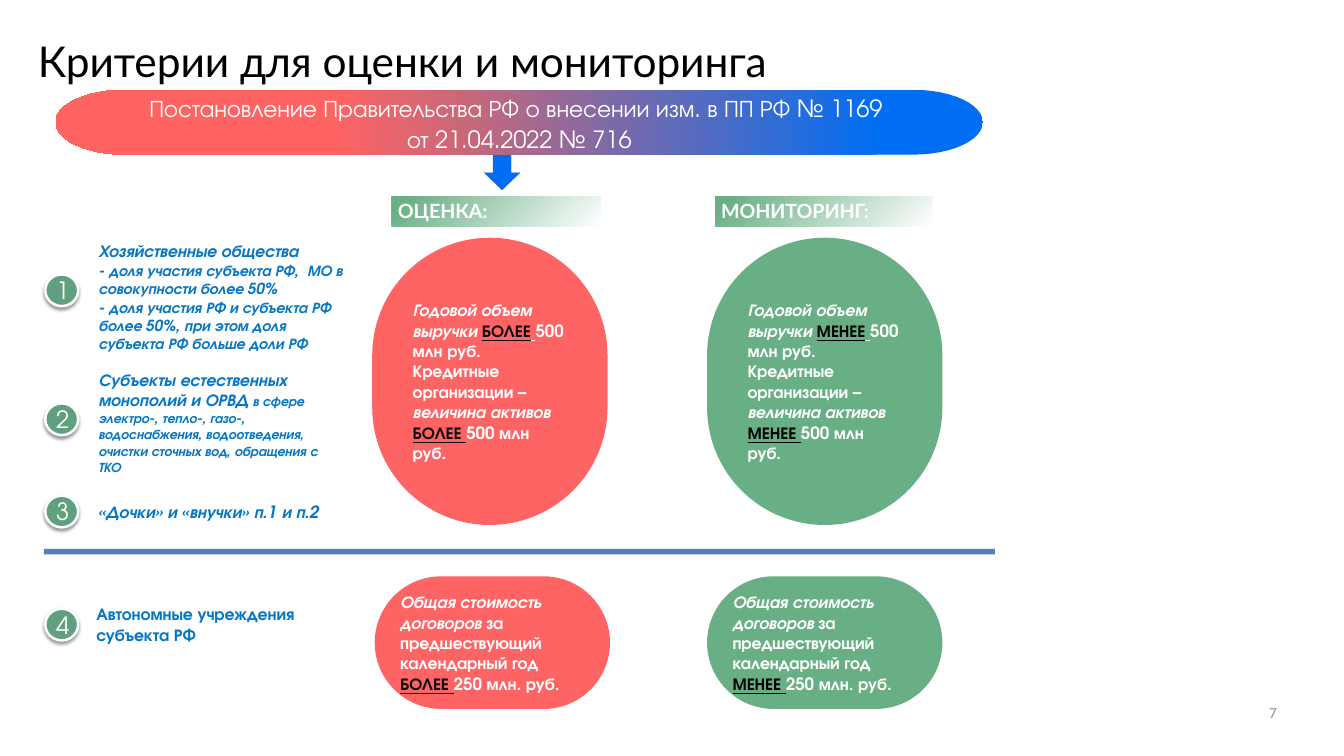
from math import cos, pi, sin

from lxml.etree import SubElement
from pptx import Presentation
from pptx.dml.color import RGBColor
from pptx.enum.shapes import MSO_SHAPE
from pptx.enum.text import MSO_ANCHOR, MSO_AUTO_SIZE, PP_ALIGN
from pptx.oxml.ns import qn
from pptx.util import Pt

HEADING_FONT = "Lato"
BODY_FONT = "TeX Gyre Adventor"
WHITE, BLACK, BLUE, TEXT_BLUE = "FFFFFF", "000000", "006EF3", "0776C3"
RED, GREEN, BADGE_GREEN = "FF6464", "69AF85", "60A07E"


def color(hex_code):
    return RGBColor.from_string(hex_code)


def points(*lengths):
    return [Pt(length) for length in lengths]


def style_run(run, size, hex_code, font=BODY_FONT, bold=False, italic=False, underline=False):
    run.font.name = font
    run.font.size = Pt(size)
    run.font.bold = bold
    run.font.italic = italic
    run.font.underline = underline
    run.font.color.rgb = color(hex_code)
    run._r.get_or_add_rPr().set("spc", "-10")


def prepare_frame(holder, anchor=MSO_ANCHOR.TOP, insets=(7.2, 3.6, 7.2, 3.6)):
    frame = holder.text_frame
    frame.word_wrap = True
    frame.auto_size = MSO_AUTO_SIZE.NONE
    frame.vertical_anchor = anchor
    frame.margin_left, frame.margin_top, frame.margin_right, frame.margin_bottom = points(*insets)
    return frame


def write(holder, text, size, hex_code, align=PP_ALIGN.LEFT, anchor=MSO_ANCHOR.TOP,
          insets=(7.2, 3.6, 7.2, 3.6), **style):
    frame = prepare_frame(holder, anchor, insets)
    frame.text = text
    for paragraph in frame.paragraphs:
        paragraph.alignment = align
        for run in paragraph.runs:
            style_run(run, size, hex_code, **style)
    return frame


def write_mixed(holder, paragraphs, anchor=MSO_ANCHOR.TOP):
    frame = prepare_frame(holder, anchor)
    for index, pieces in enumerate(paragraphs):
        paragraph = frame.add_paragraph() if index else frame.paragraphs[0]
        paragraph.alignment = PP_ALIGN.LEFT
        for text, style in pieces:
            run = paragraph.add_run()
            run.text = text
            style_run(run, bold=True, **style)


def place(holder, *box):
    holder.left, holder.top, holder.width, holder.height = points(*box)


def add_note(slide, box, text, size, hex_code, **options):
    write(slide.shapes.add_textbox(*points(*box)), text, size, hex_code, **options)


def add_solid(slide, kind, box, fill):
    shape = slide.shapes.add_shape(kind, *points(*box))
    shape.shadow.inherit = False
    shape.fill.solid()
    shape.fill.fore_color.rgb = color(fill)
    shape.line.fill.background()
    return shape


def set_gradient(shape, stops, angle=None):
    shape.shadow.inherit = False
    shape.line.fill.background()
    shape.fill.gradient()
    gradient = shape._element.spPr.find(qn("a:gradFill"))
    for child in list(gradient):
        gradient.remove(child)
    stop_list = SubElement(gradient, qn("a:gsLst"))
    for position, hex_code in stops:
        stop = SubElement(stop_list, qn("a:gs"), pos=str(position * 1000))
        SubElement(stop, qn("a:srgbClr"), val=hex_code)
    if angle is None:
        radial = SubElement(gradient, qn("a:path"), path="circle")
        SubElement(radial, qn("a:fillToRect"), r="100000", b="100000")
    else:
        SubElement(gradient, qn("a:lin"), ang=str(angle * 60000), scaled="0")


def add_banner(slide, text):
    left, right, middle, cap, half = 147.4, 1075.9, 144, 82, 38.2
    steps = 24
    angles = [pi * step / steps - pi / 2 for step in range(steps + 1)]
    outline = [(right + cap * cos(a), middle + half * sin(a)) for a in angles]
    outline += [(left - cap * cos(a), middle - half * sin(a)) for a in angles]
    corners = [points(*corner) for corner in outline]
    builder = slide.shapes.build_freeform(*corners[0])
    builder.add_line_segments(corners[1:], close=True)
    banner = builder.convert_to_shape()
    stops = [(11, BLUE), (33, "5E6BBA"), (39, "786AAA"), (56, "C96879"), (70, "FF6362"), (89, "FF6362")]
    set_gradient(banner, stops, 180)
    frame = write(banner, text, 28, WHITE, align=PP_ALIGN.CENTER,
                  anchor=MSO_ANCHOR.MIDDLE, insets=(0, 0, 0, 0))
    frame.paragraphs[0].line_spacing = 1.1


def add_badge(slide, number, top):
    badge = add_solid(slide, MSO_SHAPE.OVAL, (53.3, top, 38.9, 37.4), BADGE_GREEN)
    badge.line.color.rgb = color(WHITE)
    badge.line.width = Pt(3)
    effects = badge._element.spPr.find(qn("a:effectLst"))
    shadow = SubElement(effects, qn("a:outerShdw"), blurRad=str(Pt(4)), dist=str(Pt(3)),
                        dir="5400000", rotWithShape="0")
    tint = SubElement(shadow, qn("a:srgbClr"), val=BLACK)
    SubElement(tint, qn("a:alpha"), val="40000")
    write(badge, str(number), 28, WHITE, align=PP_ALIGN.CENTER, anchor=MSO_ANCHOR.MIDDLE)


def add_heading(slide, left, width, text):
    heading = slide.shapes.add_shape(MSO_SHAPE.RECTANGLE, *points(left, 231.1, width, 35.3))
    set_gradient(heading, [(6, GREEN), (100, WHITE)])
    write(heading, text, 23.1, WHITE, font=HEADING_FONT, bold=True)


def add_bubble(slide, box, fill, paragraphs):
    bubble = add_solid(slide, MSO_SHAPE.ROUNDED_RECTANGLE, box, fill)
    bubble.adjustments[0] = 0.5
    write_mixed(bubble, paragraphs, MSO_ANCHOR.MIDDLE)


def add_threshold(slide, left, contracts_left, fill, limit, limit_color):
    plain = {"size": 20, "hex_code": WHITE}
    slanted = {**plain, "italic": True}
    lined = {**plain, "underline": True}
    marked = {**lined, "hex_code": limit_color}
    add_bubble(slide, (left, 280.1, 277.2, 338.4), fill, [
        [("Годовой объем выручки ", slanted), (limit, marked), (" ", lined), ("500 млн руб.", plain)],
        [("Кредитные организации – ", plain), ("величина активов ", slanted),
         (f"{limit} ", marked), ("500 млн руб.", plain)],
    ])
    add_bubble(slide, (contracts_left, 679, 277.2, 156.2), fill, [
        [("Общая стоимость договоров ", slanted), ("за предшествующий календарный год ", plain),
         (f"{limit} ", marked), ("250 млн. руб.", plain)],
    ])


def fill_companies(body):
    place(body, 108.7, 280.1, 304.6, 143.3)
    frame = write(body, "Хозяйственные общества\n"
                  "- доля участия субъекта РФ,  МО в совокупности более 50%\n"
                  "- доля участия РФ и субъекта РФ более 50%, при этом доля субъекта РФ больше доли РФ",
                  18, TEXT_BLUE, bold=True, italic=True)
    for paragraph in frame.paragraphs:
        properties = paragraph._p.get_or_add_pPr()
        properties.set("marL", "0")
        properties.set("indent", "0")
        SubElement(properties, qn("a:buNone"))
        paragraph.space_before = Pt(0)
    frame.paragraphs[0].runs[0].font.size = Pt(20)


def add_monopolies(slide):
    accent = {"hex_code": TEXT_BLUE, "italic": True}
    monopolies = slide.shapes.add_textbox(*points(108.7, 431.3, 297.4, 133.2))
    write_mixed(monopolies, [[
        ("Субъекты естественных монополий и ОРВД ", {**accent, "size": 20}),
        ("в сфере электро-, тепло-, газо-, водоснабжения, водоотведения, "
         "очистки сточных вод, обращения с ТКО", {**accent, "size": 16}),
    ]])


def main():
    deck = Presentation()
    deck.slide_width, deck.slide_height = points(1583.28, 890.64)
    slide = deck.slides.add_slide(deck.slide_layouts[1])

    title = slide.shapes.title
    place(title, 44.6, 33.8, 1324.8, 67.7)
    write(title, "Критерии для оценки и мониторинга", 50, BLACK,
          font=HEADING_FONT, insets=(0, 7.2, 0, 0))
    fill_companies(slide.placeholders[1])

    add_banner(slide, "Постановление Правительства РФ о внесении изм. в ПП РФ № 1169 \vот 21.04.2022 № 716")
    arrow = add_solid(slide, MSO_SHAPE.DOWN_ARROW, (570.2, 182.9, 42.5, 41), BLUE)
    arrow.line.color.rgb = color("3A5F8C")
    arrow.line.width = Pt(0.25)

    add_heading(slide, 461.5, 246.2, "ОЦЕНКА:")
    add_heading(slide, 842.4, 255.6, "МОНИТОРИНГ:")
    add_threshold(slide, 438.5, 441.4, RED, "БОЛЕЕ", "0D0D0D")
    add_threshold(slide, 833, 833, GREEN, "МЕНЕЕ", BLACK)

    for number, top in enumerate((323.3, 475.2, 583.9, 717.1), 1):
        add_badge(slide, number, top)
    add_monopolies(slide)
    add_note(slide, (108.7, 586.8, 297.4, 31.7), "«Дочки» и «внучки» п.1 и п.2",
             20, TEXT_BLUE, bold=True, italic=True)
    add_note(slide, (106.6, 707.8, 300.2, 55.4), "Автономные учреждения\nсубъекта РФ",
             20, TEXT_BLUE, bold=True)

    add_solid(slide, MSO_SHAPE.RECTANGLE, (51.8, 646.6, 1120.3, 6.5), "4F81BD")
    add_note(slide, (1139.8, 828, 364.3, 44.6), "7", 18, "8C8C8C",
             font="Calibri", align=PP_ALIGN.RIGHT, insets=(0, 0, 0, 0))
    deck.save("out.pptx")


if __name__ == "__main__":
    main()
